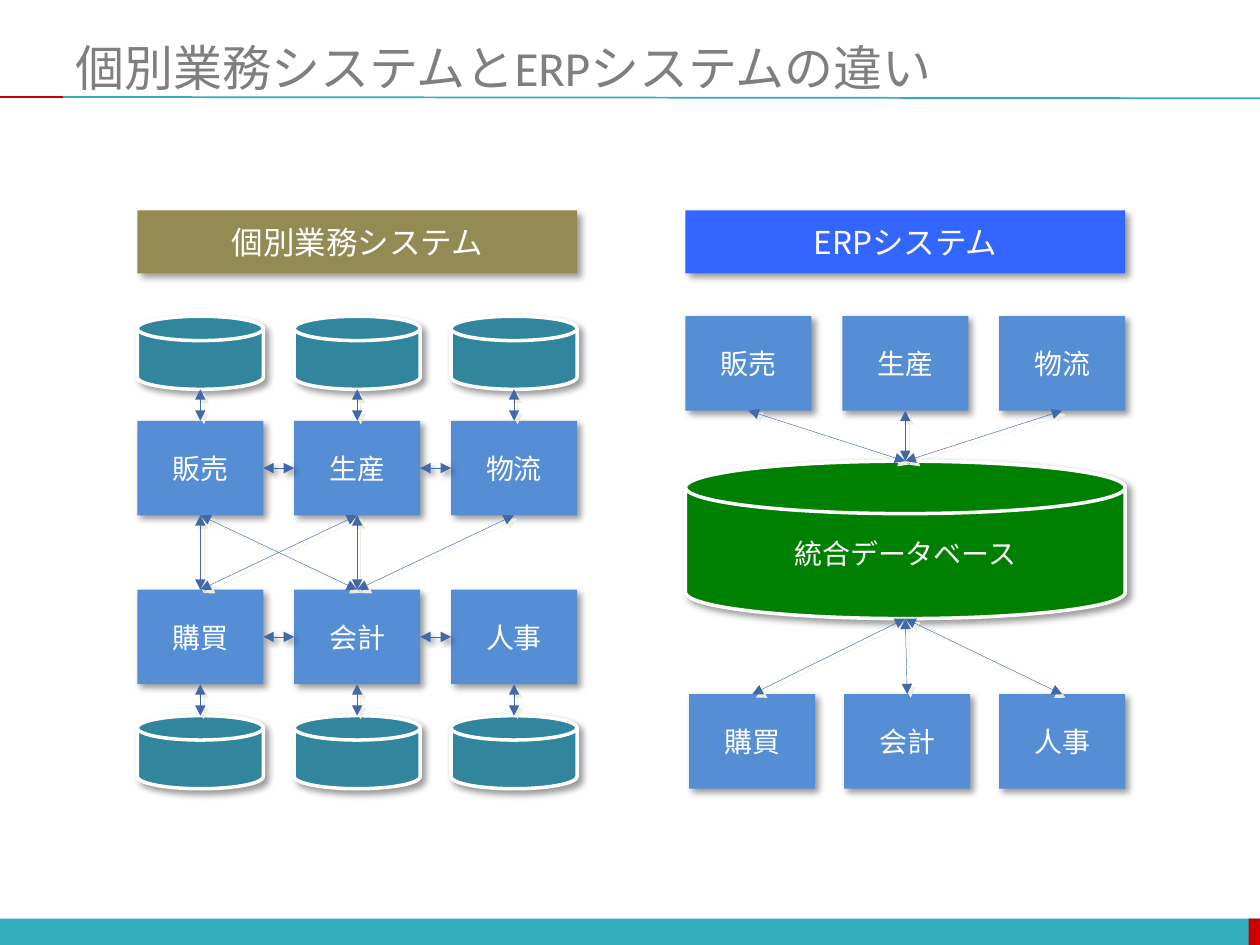
import pptx
import pptx.util
import pptx.dml.color
import pptx.enum.shapes
import pptx.enum.text
import pptx.oxml
import pptx.oxml.ns

Inches = pptx.util.Inches
Pt = pptx.util.Pt
Color = pptx.dml.color.RGBColor
Kind = pptx.enum.shapes.MSO_SHAPE
Align = pptx.enum.text.PP_ALIGN
Anchor = pptx.enum.text.MSO_ANCHOR

WHITE = Color(0xFF, 0xFF, 0xFF)
GRAY = Color(0x7F, 0x7F, 0x7F)
AQUA = Color(0x33, 0xAC, 0xBD)
RED = Color(0xCC, 0x00, 0x00)
GREEN = Color(0x00, 0x80, 0x00)
TEAL = Color(0x31, 0x85, 0x9C)
BLUE = Color(0x55, 0x8E, 0xD5)
NAVY = Color(0x41, 0x68, 0xA7)
OLIVE = Color(0x94, 0x8A, 0x54)
ROYAL = Color(0x33, 0x66, 0xFF)
CREAM = Color(0xEE, 0xEC, 0xE1)
BLACK = Color(0x00, 0x00, 0x00)

FONT = "Noto Sans CJK JP"
TOP, LEFT, BOTTOM, RIGHT = range(4)
UPPER = ("販売", "生産", "物流")
LOWER = ("購買", "会計", "人事")
BOX = Inches(1)
TALL = Inches(0.75)
DISK = Inches(0.58)


def set_font(text, size, color, latin):
    for run in text.paragraphs[0].runs:
        run.font.size = Pt(size)
        run.font.color.rgb = color
        run.font.name = latin
        east = run.font._element.makeelement(pptx.oxml.ns.qn("a:ea"), {"typeface": FONT})
        run.font._element.append(east)


def add_shade(part, color=BLACK, alpha=40, blur=4, dist=3):
    part._element.spPr.append(pptx.oxml.parse_xml(
        f'<a:effectLst {pptx.oxml.ns.nsdecls("a")}>'
        f'<a:outerShdw blurRad="{Pt(blur)}" dist="{Pt(dist)}" dir="2700000" algn="tl" rotWithShape="0">'
        f'<a:srgbClr val="{color}"><a:alpha val="{alpha * 1000}"/></a:srgbClr>'
        '</a:outerShdw></a:effectLst>'))


def add_block(slide, kind, box, fill, text="", size=16):
    block = slide.shapes.add_shape(kind, *box)
    block.fill.solid()
    block.fill.fore_color.rgb = fill
    if kind == Kind.ROUNDED_RECTANGLE:
        block.adjustments[0] = 0
        block.line.fill.background()
    else:
        block.line.color.rgb = WHITE
        block.line.width = Pt(2)
    add_shade(block)
    if text:
        frame = block.text_frame
        frame.text = text
        frame.vertical_anchor = Anchor.MIDDLE
        frame.paragraphs[0].alignment = Align.CENTER
        set_font(frame, size, WHITE, FONT)
    return block


def add_row(slide, kind, left, top, width, height, fill, names=("",) * 3):
    step = (width - BOX) // 2
    return [add_block(slide, kind, (left + i * step, top, BOX, height), fill, name)
            for i, name in enumerate(names)]


def find_point(block, side):
    across, down = {TOP: (1, 0), LEFT: (0, 1), BOTTOM: (1, 2), RIGHT: (2, 1)}[side]
    return block.left + block.width * across // 2, block.top + block.height * down // 2


def add_line(slide, start, end, color, width):
    line = slide.shapes.add_connector(pptx.enum.shapes.MSO_CONNECTOR.STRAIGHT, *start, *end)
    line.line.color.rgb = color
    line.line.width = Pt(width)
    return line


def add_link(slide, first, side, other, far):
    line = add_line(slide, find_point(first, side), find_point(other, far), NAVY, 0.25)
    if first.auto_shape_type == Kind.ROUNDED_RECTANGLE:
        line.begin_connect(first, side)
    if other.auto_shape_type == Kind.ROUNDED_RECTANGLE:
        line.end_connect(other, far)
    edge = line.line._get_or_add_ln()
    for tag in ("a:headEnd", "a:tailEnd"):
        edge.append(edge.makeelement(pptx.oxml.ns.qn(tag), {"type": "triangle"}))
    if side == LEFT:
        add_shade(line)
    else:
        add_shade(line, CREAM, 100, 0, 2.8)


def draw_frame(slide, width, height):
    bar = height - Inches(0.21)
    for left, span, color in ((0, width, AQUA), (width - Inches(0.09), Inches(0.09), RED)):
        strip = slide.shapes.add_shape(Kind.RECTANGLE, left, bar, span, Inches(0.21))
        strip.shadow.inherit = False
        strip.fill.solid()
        strip.fill.fore_color.rgb = color
        strip.line.fill.background()
    rule, split = Inches(0.77), Inches(0.5)
    for start, end, color in (((split, rule), (width, Inches(0.78)), AQUA),
                              ((0, rule), (split, rule), RED)):
        line = add_line(slide, start, end, color, 1)
        line._element.spPr.append(line._element.makeelement(pptx.oxml.ns.qn("a:effectLst"), {}))


def draw_title(slide, left, top, width, height):
    title = slide.shapes.title
    title.left, title.top, title.width, title.height = left, top, width, height
    frame = title.text_frame
    frame.text = "個別業務システムとERPシステムの違い"
    frame.word_wrap = True
    frame.auto_size = pptx.enum.text.MSO_AUTO_SIZE.NONE
    frame.vertical_anchor = Anchor.MIDDLE
    frame.paragraphs[0].alignment = Align.LEFT
    set_font(frame, 28, GRAY, "Calibri")


def draw_split(slide, left, top, width):
    rect, disk = Kind.ROUNDED_RECTANGLE, Kind.FLOWCHART_MAGNETIC_DISK
    add_block(slide, rect, (left, top, width, Inches(0.5)), OLIVE, "個別業務システム", 18)
    stores = add_row(slide, disk, left, top + Inches(0.84), width, DISK, TEAL)
    upper = add_row(slide, rect, left, top + Inches(1.67), width, TALL, BLUE, UPPER)
    lower = add_row(slide, rect, left, top + Inches(3.01), width, TALL, BLUE, LOWER)
    bases = add_row(slide, disk, left, top + Inches(4.01), width, DISK, TEAL)
    for above, below in ((stores, upper), (lower, bases)):
        for first, other in zip(above, below):
            add_link(slide, first, BOTTOM, other, TOP)
    for row in (upper, lower):
        for first, other in zip(row, row[1:]):
            add_link(slide, other, LEFT, first, RIGHT)
    for i, j in ((0, 0), (0, 1), (1, 0), (1, 1), (2, 1)):
        add_link(slide, upper[i], BOTTOM, lower[j], TOP)


def draw_joint(slide, left, top, width):
    rect, disk = Kind.ROUNDED_RECTANGLE, Kind.FLOWCHART_MAGNETIC_DISK
    inset = Inches(0.03)
    add_block(slide, rect, (left, top, width, Inches(0.5)), ROYAL, "ERPシステム", 18)
    store = add_block(slide, disk, (left, top + Inches(1.99), width, Inches(1.25)),
                      GREEN, "統合データベース")
    upper = add_row(slide, rect, left, top + Inches(0.84), width, TALL, BLUE, UPPER)
    lower = add_row(slide, rect, left + inset, top + Inches(3.84), width - inset,
                    TALL, BLUE, LOWER)
    for block in upper:
        add_link(slide, block, BOTTOM, store, TOP)
    for block in lower:
        add_link(slide, block, TOP, store, BOTTOM)


def main():
    deck = pptx.Presentation()
    deck.slide_width, deck.slide_height = Inches(10), Inches(7.5)
    slide = deck.slides.add_slide(deck.slide_layouts[5])
    draw_frame(slide, deck.slide_width, deck.slide_height)
    draw_title(slide, Inches(0.5), Inches(0.3), Inches(9.5), Inches(0.46))
    draw_split(slide, Inches(1.09), Inches(1.67), Inches(3.49))
    draw_joint(slide, Inches(5.44), Inches(1.67), Inches(3.49))
    deck.save("out.pptx")


if __name__ == "__main__":
    main()
